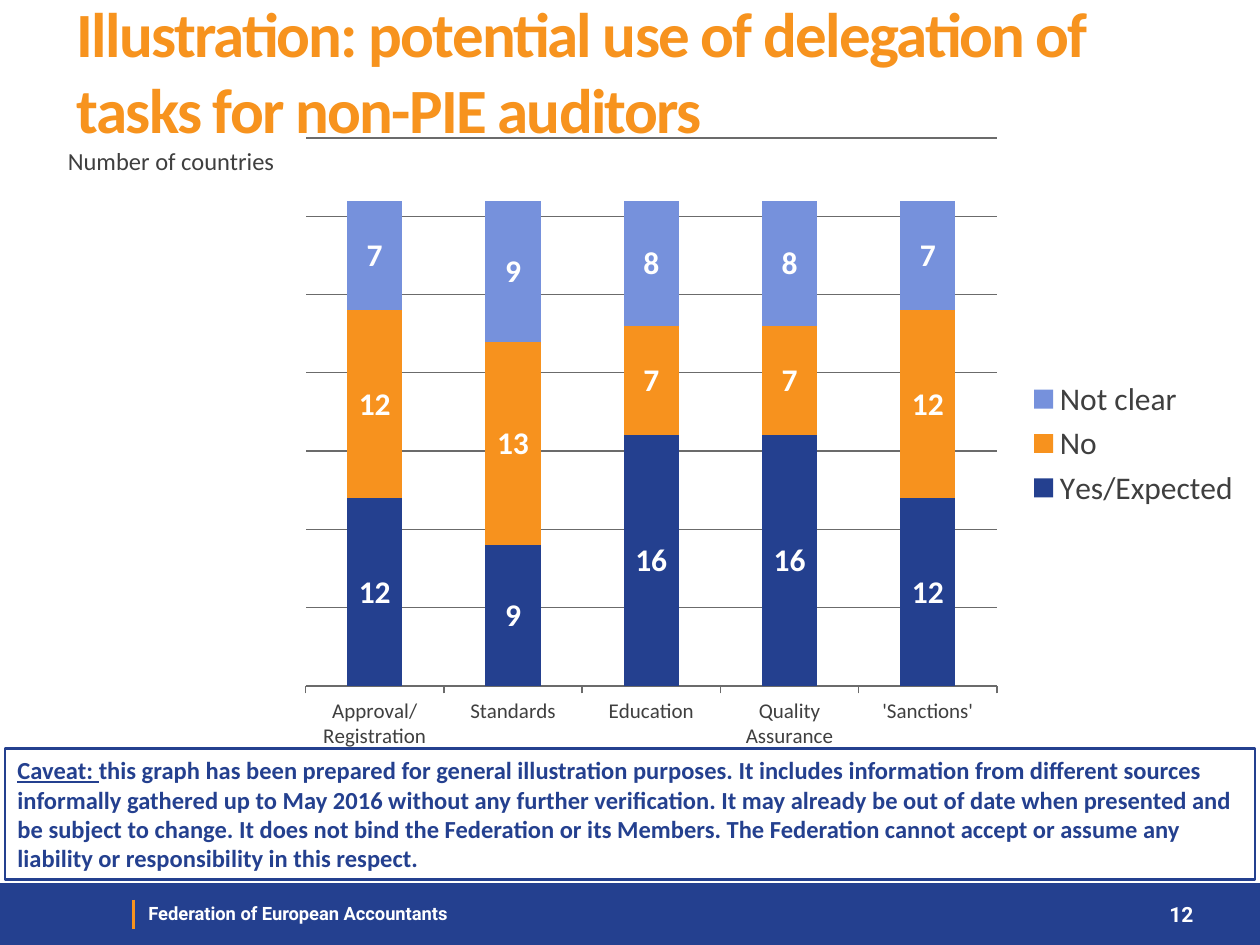
"""Build a slide with a stacked column chart on delegation of tasks for non-PIE auditors."""
from lxml import etree
from pptx import Presentation, util as u
from pptx.chart.data import CategoryChartData
from pptx.dml.color import RGBColor
from pptx.enum import chart as ch, shapes, text
from pptx.oxml import parse_xml
from pptx.oxml.ns import nsdecls, qn

Inches, Pt = u.Inches, u.Pt
COLORS = {
    "navy": "24408F", "orange": "F7931E", "no": "F7921E", "unclear": "7691DC",
    "white": "FFFFFF", "text": "3F3F3F", "grid": "6B6B6B",
}


def rgb(name):
    return RGBColor.from_string(COLORS[name])


def add_text(p, content, size=14, font="Calibri", color="navy", bold=True, underline=False, spacing=None):
    r = p.add_run()
    r.text = content
    f = r.font
    f.size, f.name, f.bold, f.underline = Pt(size), font, bold, underline
    f.color.rgb = rgb(color)
    if spacing is not None:
        r._r.get_or_add_rPr().set("spc", str(spacing))


prs = Presentation()
prs.slide_width, prs.slide_height = Inches(10), Inches(7.5)
s = prs.slides.add_slide(prs.slide_layouts[5])

title = s.shapes.title
title.left, title.top, title.width, title.height = Inches(0.51), Inches(0.02), Inches(9), Inches(1.08)
tf = title.text_frame
tf.word_wrap = True
tf.auto_size = text.MSO_AUTO_SIZE.NONE
tf.vertical_anchor = text.MSO_ANCHOR.MIDDLE
p = tf.paragraphs[0]
p.alignment = text.PP_ALIGN.LEFT
add_text(p, "Illustration: potential use of delegation of tasks for non-PIE auditors",
         size=36, color="orange", spacing=-100)

data = CategoryChartData()
data.categories = ["Approval/Registration", "Standards", "Education", "Quality Assurance", "'Sanctions'"]
data.add_series("Yes/Expected", (12, 9, 16, 16, 12))
data.add_series("No", (12, 13, 7, 7, 12))
data.add_series("Not clear", (7, 9, 8, 8, 7))
chart = s.shapes.add_chart(ch.XL_CHART_TYPE.COLUMN_STACKED, Inches(0.34), Inches(1),
                           Inches(9.61), Inches(5.04), data).chart
chart.has_title = False
chart.font.size, chart.font.name = Pt(18), "Calibri"
chart.font.color.rgb = rgb("text")
chart.has_legend = True
chart.legend.position = ch.XL_LEGEND_POSITION.RIGHT
chart.legend.include_in_layout = False

plot = chart.plots[0]
plot.gap_width, plot.overlap, plot.vary_by_categories = 150, 100, False
for series, color in zip(plot.series, ("navy", "no", "unclear")):
    series.format.fill.solid()
    series.format.fill.fore_color.rgb = rgb(color)
    labels = series.data_labels
    labels.show_value = True
    labels.font.size, labels.font.name, labels.font.bold = Pt(18), "Calibri", True
    labels.font.color.rgb = rgb("white")

cat_axis, val_axis = chart.category_axis, chart.value_axis
cat_axis.tick_labels.font.size = Pt(12)
cat_axis.major_tick_mark = ch.XL_TICK_MARK.OUTSIDE
val_axis.minimum_scale, val_axis.maximum_scale, val_axis.major_unit = 0, 35, 5
val_axis.visible = False
val_axis.has_major_gridlines = True
for line in (cat_axis.format.line, val_axis.major_gridlines.format.line):
    line.color.rgb = rgb("grid")
    line.width = Pt(0.75)

plot_area = chart._chartSpace.chart.plotArea
for old in plot_area.findall(qn("c:layout")):
    plot_area.remove(old)
layout = parse_xml(f'<c:layout {nsdecls("c")}><c:manualLayout><c:layoutTarget val="inner"/>'
                   '<c:xMode val="edge"/><c:yMode val="edge"/><c:x val="0.217"/><c:y val="0.019"/>'
                   '<c:w val="0.571"/><c:h val="0.863"/></c:manualLayout></c:layout>')
plot_area.insert(0, layout)

for left, top, width, height, fill, outline in (
    (0, 7.01, 10, 0.49, "navy", None),
    (0.04, 5.94, 9.92, 1.04, "white", "navy"),
):
    sp = s.shapes.add_shape(shapes.MSO_SHAPE.RECTANGLE, Inches(left), Inches(top), Inches(width), Inches(height))
    sp.shadow.inherit = False
    sp.fill.solid()
    sp.fill.fore_color.rgb = rgb(fill)
    if outline:
        sp.line.color.rgb = rgb(outline)
        sp.line.width = Pt(1.5)
    else:
        sp.line.fill.background()

tf = sp.text_frame
tf.word_wrap = True
tf.vertical_anchor = text.MSO_ANCHOR.MIDDLE
p = tf.paragraphs[0]
p.alignment = text.PP_ALIGN.LEFT
add_text(p, "Caveat: ", underline=True)
add_text(p, "this graph has been prepared for general illustration purposes. It includes information from "
            "different sources informally gathered up to May 2016 without any further verification. It may "
            "already be out of date when presented and be subject to change. It does not bind the Federation "
            "or its Members. The Federation cannot accept or assume any liability or responsibility in this respect.")

divider = s.shapes.add_connector(shapes.MSO_CONNECTOR.STRAIGHT, Inches(1.06), Inches(7.14), Inches(1.06), Inches(7.37))
divider.line.color.rgb = rgb("orange")
divider.line.width = Pt(1.5)
etree.SubElement(divider._element.spPr, qn("a:effectLst"))

footer = {"font": "Roboto", "color": "white"}
for content, left, top, width, height, align, style in (
    ("Number of countries", 0.44, 1.1, 2, 0.35, text.PP_ALIGN.LEFT, {"color": "text", "bold": False}),
    ("Federation of European Accountants", 1.08, 7.1, 3.7, 0.29, text.PP_ALIGN.LEFT, {"size": 10.5, **footer}),
    ("12", 8.94, 7.01, 0.63, 0.49, text.PP_ALIGN.RIGHT, {"size": 12, **footer}),
):
    tf = s.shapes.add_textbox(Inches(left), Inches(top), Inches(width), Inches(height)).text_frame
    tf.word_wrap = True
    tf.vertical_anchor = text.MSO_ANCHOR.MIDDLE
    p = tf.paragraphs[0]
    p.alignment = align
    add_text(p, content, **style)

prs.save("out.pptx")
